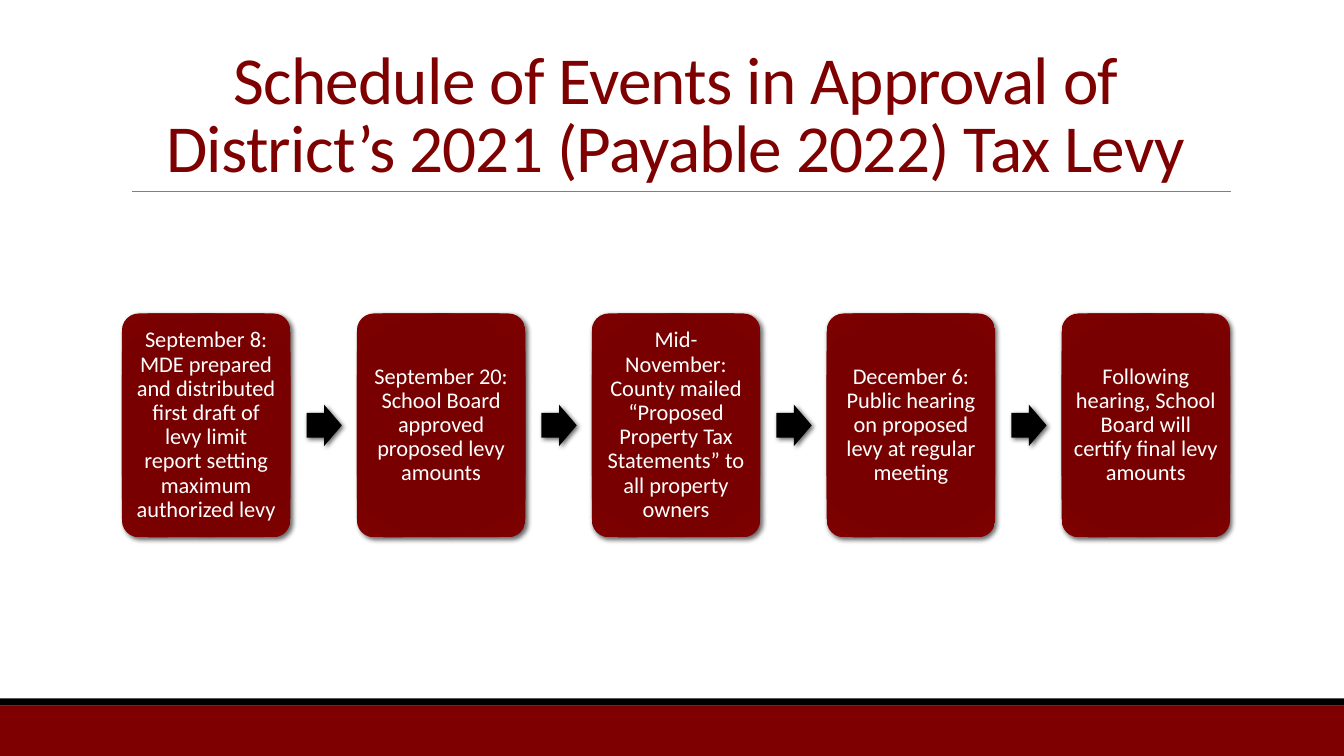
from dataclasses import dataclass

from lxml import etree
from pptx import Presentation
from pptx.dml.color import RGBColor
from pptx.enum.shapes import MSO_CONNECTOR, MSO_SHAPE
from pptx.enum.text import MSO_ANCHOR, PP_ALIGN
from pptx.oxml import parse_xml
from pptx.oxml.ns import nsdecls, qn
from pptx.util import Inches, Pt

RECTANGLE = MSO_SHAPE.RECTANGLE
ROUNDED = MSO_SHAPE.ROUNDED_RECTANGLE
ARROW = MSO_SHAPE.RIGHT_ARROW
STRAIGHT = MSO_CONNECTOR.STRAIGHT
CENTER = PP_ALIGN.CENTER
MIDDLE = MSO_ANCHOR.MIDDLE
BOTTOM = MSO_ANCHOR.BOTTOM


@dataclass(frozen=True)
class Theme:
    font: str = "Calibri"
    maroon: str = "7E0000"
    black: str = "000000"
    white: str = "FFFFFF"
    gray: str = "808080"
    card_stops: tuple = ((0, "750000"), (34, "770000"), (70, "780000"), (100, "7E0000"))
    title_size: float = 48
    card_size: float = 16


TITLE = "Schedule of Events in Approval of District’s 2021 (Payable 2022) Tax Levy"
EVENTS = [
    "September 8: MDE prepared and distributed first draft of levy limit "
    "report setting maximum authorized levy",
    "September 20: School Board approved proposed levy amounts",
    "Mid-November: County mailed “Proposed Property Tax Statements” to all property owners",
    "December 6: Public hearing on proposed levy at regular meeting",
    "Following hearing, School Board will certify final levy amounts",
]


def write_text(frame, text, *, font, size, color, anchor, line_spacing,
               space_after=0, inset=(0.1, 0.05), tracking=None):
    frame.word_wrap = True
    frame.vertical_anchor = anchor
    frame.margin_left = frame.margin_right = Inches(inset[0])
    frame.margin_top = frame.margin_bottom = Inches(inset[1])
    para = frame.paragraphs[0]
    para.alignment = CENTER
    para.line_spacing = line_spacing
    para.space_after = Pt(space_after)
    span = para.add_run()
    span.text = text
    span.font.name = font
    span.font.size = Pt(size)
    span.font.color.rgb = RGBColor.from_string(color)
    if tracking is not None:
        span.font._element.set("spc", str(round(tracking * 100)))


class SlideBuilder:
    def __init__(self, page, theme):
        self.page = page
        self.theme = theme

    def shape(self, kind, left, top, width, height, color, adjustments=()):
        shape = self.page.shapes.add_shape(
            kind, Inches(left), Inches(top), Inches(width), Inches(height))
        for index, value in enumerate(adjustments):
            shape.adjustments[index] = value
        shape.fill.solid()
        shape.fill.fore_color.rgb = RGBColor.from_string(color)
        shape.line.fill.background()
        shape.shadow.inherit = False
        return shape

    def cast_shadow(self, shape):
        effects = shape._element.spPr.find(qn("a:effectLst"))
        effects.append(parse_xml(
            f'<a:outerShdw {nsdecls("a")} blurRad="{Pt(3.5)}" dist="{Pt(2)}" '
            f'dir="{45 * 60000}" algn="tl" rotWithShape="0">'
            f'<a:srgbClr val="{self.theme.black}"><a:alpha val="60000"/></a:srgbClr>'
            '</a:outerShdw>'))

    def radial_fill(self, shape):
        stops = "".join(
            f'<a:gs pos="{position * 1000}"><a:srgbClr val="{color}"/></a:gs>'
            for position, color in self.theme.card_stops)
        gradient = parse_xml(
            f'<a:gradFill {nsdecls("a")} rotWithShape="1"><a:gsLst>{stops}</a:gsLst>'
            '<a:path path="circle">'
            '<a:fillToRect l="100000" t="100000" r="100000" b="100000"/>'
            '</a:path></a:gradFill>')
        properties = shape._element.spPr
        properties.replace(properties.find(qn("a:solidFill")), gradient)

    def rule(self, left, right, y):
        line = self.page.shapes.add_connector(
            STRAIGHT, Inches(left), Inches(y), Inches(right), Inches(y))
        line.line.color.rgb = RGBColor.from_string(self.theme.gray)
        line.line.width = Pt(0.5)
        etree.SubElement(line._element.spPr, qn("a:effectLst"))

    def title(self, text, left, top, width, height):
        box = self.page.shapes.add_textbox(
            Inches(left), Inches(top), Inches(width), Inches(height))
        write_text(box.text_frame, text, font=self.theme.font,
                   size=self.theme.title_size, color=self.theme.maroon,
                   anchor=BOTTOM, line_spacing=0.85, tracking=-0.5)

    def card(self, text, left, top, width, height):
        card = self.shape(ROUNDED, left, top, width, height, self.theme.maroon, (0.1,))
        self.radial_fill(card)
        self.cast_shadow(card)
        write_text(card.text_frame, text, font=self.theme.font,
                   size=self.theme.card_size, color=self.theme.white,
                   anchor=MIDDLE, line_spacing=0.9, space_after=5.6,
                   inset=(0.07, 0.07))

    def arrow(self, left, top, width, height):
        arrow = self.shape(ARROW, left, top, width, height, self.theme.black, (0.6, 0.5))
        self.cast_shadow(arrow)


def main():
    deck = Presentation()
    deck.slide_width = Inches(13.33)
    deck.slide_height = Inches(7.5)
    theme = Theme()
    builder = SlideBuilder(deck.slides.add_slide(deck.slide_layouts[6]), theme)

    # Footer bands
    builder.shape(RECTANGLE, 0, 7, 13.33, 0.5, theme.maroon)
    builder.shape(RECTANGLE, 0, 6.93, 13.33, 0.07, theme.black)

    # Title and rule
    builder.rule(1.31, 12.21, 1.9)
    builder.title(TITLE, 1.2, 0.31, 11, 1.59)

    # Timeline: cards at an equal pitch, an arrow in each gap
    first_left, card_top, card_width, card_height = 1.21, 3.11, 1.67, 2.22
    pitch, arrow_gap, arrow_width, arrow_height = 2.33, 0.16, 0.35, 0.41
    arrow_top = card_top + (card_height - arrow_height) / 2
    for index, event in enumerate(EVENTS):
        left = first_left + index * pitch
        builder.card(event, left, card_top, card_width, card_height)
        if index < len(EVENTS) - 1:
            builder.arrow(left + card_width + arrow_gap, arrow_top,
                          arrow_width, arrow_height)

    deck.save("out.pptx")


if __name__ == "__main__":
    main()
